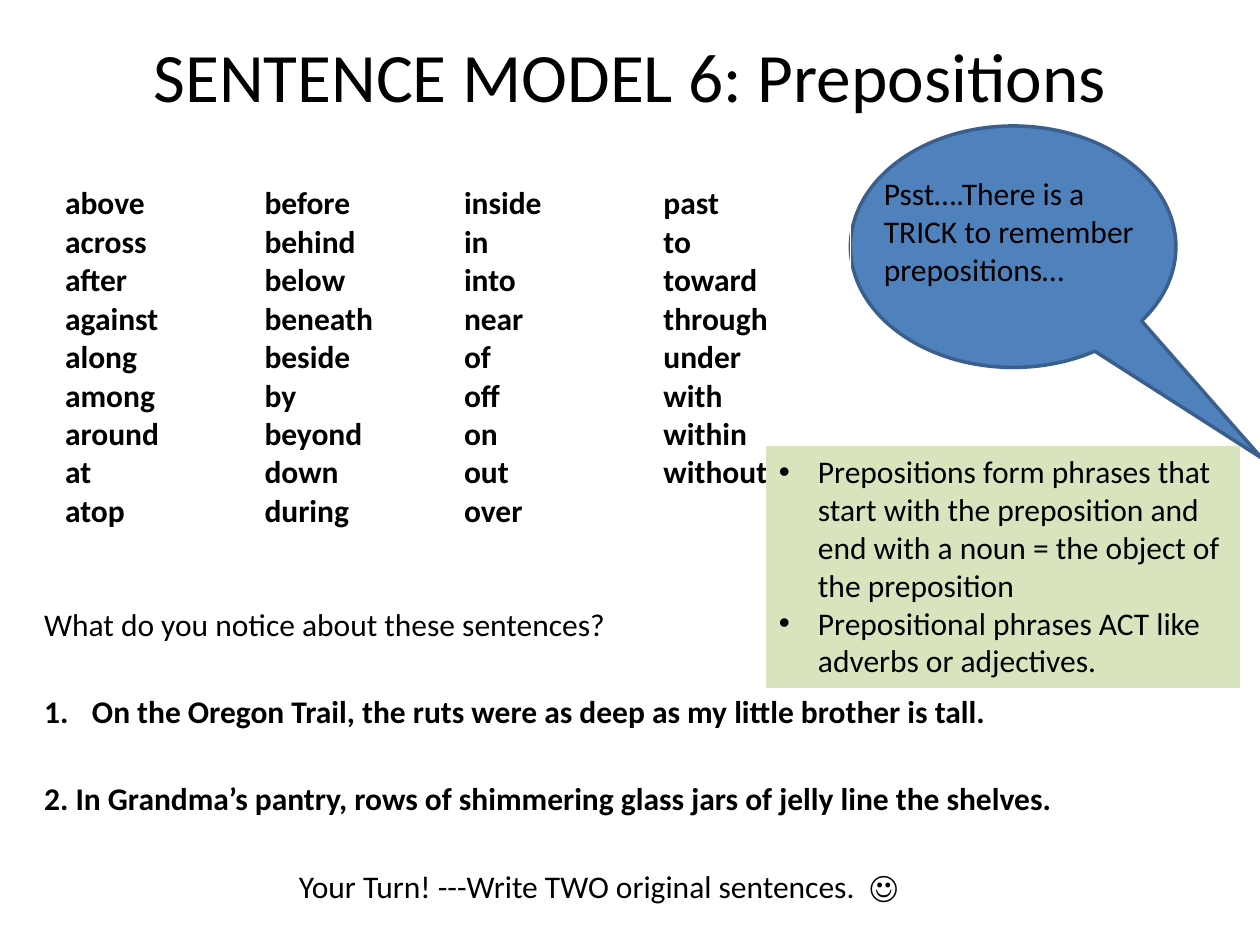
from lxml.etree import SubElement as Sub
from pptx import Presentation
from pptx.dml.color import RGBColor as Rgb
from pptx.enum.shapes import MSO_SHAPE as Kind
from pptx.enum.text import MSO_ANCHOR as Anchor, MSO_AUTO_SIZE as Fit, PP_ALIGN as Align
from pptx.oxml.ns import qn
from pptx.util import Inches, Pt

HUES = {"ink": "000000", "blue": "4F81BD", "edge": "3A5F8C", "green": "D7E4BD"}
UNIT = Inches(10) // 120  # the slide is a grid of 120 columns and 90 rows


def box(*cells):
    return [int(n * UNIT) for n in cells]


def write(par, text, size=18, bold=False, align=Align.LEFT, gap=None, hang=0, mark=None):
    """Fill a paragraph; mark is a bullet tag with its attributes."""
    run = par.add_run()
    run.text = text
    run.font.name, run.font.size, run.font.bold = "Calibri", Pt(size), bold
    run.font.color.rgb = Rgb.from_string(HUES["ink"])
    par.alignment = align
    if gap is not None:
        par.space_before = Pt(gap)
    props = par._p.get_or_add_pPr()
    props.set("marL", str(Inches(hang)))
    props.set("indent", str(-Inches(hang)))
    tag, attrs = mark or ("buNone", {})
    if tag == "buChar":
        Sub(props, qn("a:buFont"), typeface="Arial")
    Sub(props, qn("a:" + tag), **attrs)


deck = Presentation()
deck.slide_width, deck.slide_height = 120 * UNIT, 90 * UNIT
slide = deck.slides.add_slide(deck.slide_layouts[1])
shapes = slide.shapes

# Title, held in the upper part of its box
title = shapes.title
title.left, title.top, title.width, title.height = box(6, 3.6, 108, 15)
frame = title.text_frame
frame.auto_size, frame.vertical_anchor = Fit.NONE, Anchor.MIDDLE
frame.margin_top, frame.margin_bottom = 0, Inches(0.67)
write(frame.paragraphs[0], "SENTENCE MODEL 6: Prepositions", size=39.6, align=Align.CENTER)

# Sentences to study
body = slide.placeholders[1]
body.left, body.top, body.width, body.height = box(3, 57, 108, 16)
frame = body.text_frame
frame.auto_size = Fit.NONE
lines = [
    ("What do you notice about these sentences?", {}),
    ("On the Oregon Trail, the ruts were as deep as my little brother is tall.",
     {"bold": True, "gap": 28.3, "mark": ("buAutoNum", {"type": "arabicPeriod"})}),
    ("2. In Grandma’s pantry, rows of shimmering glass jars of jelly line the shelves.",
     {"bold": True, "gap": 28.3}),
    ("Your Turn! ---Write TWO original sentences.  ☺",
     {"gap": 28.3, "align": Align.CENTER}),
]
for i, (text, form) in enumerate(lines):
    par = frame.add_paragraph() if i else frame.paragraphs[0]
    write(par, text, hang=0.38, **form)

# Speech bubble with its hint
bubble = shapes.add_shape(Kind.OVAL_CALLOUT, *box(81, 12, 31, 23))
bubble.adjustments[0], bubble.adjustments[1] = 0.763, 0.875
bubble.shadow.inherit = False
bubble.fill.solid()
bubble.fill.fore_color.rgb = Rgb.from_string(HUES["blue"])
bubble.line.color.rgb = Rgb.from_string(HUES["edge"])
bubble.line.width = Pt(2)

hint = shapes.add_textbox(*box(83, 16, 27, 12)).text_frame
hint.word_wrap = True
write(hint.paragraphs[0], "Psst….There is a TRICK to remember prepositions…")

# Preposition table, one column of words per cell
words = [
    "above across after against along among around at atop",
    "before behind below beneath beside by beyond down during",
    "inside in into near of off on out over",
    "past to toward through under with within without",
]
table = shapes.add_table(1, len(words), *box(5, 17, 76, 35)).table
for cell, group in zip(table.rows[0].cells, words):
    cell.fill.background()
    for i, word in enumerate(group.split()):
        par = cell.text_frame.add_paragraph() if i else cell.text_frame.paragraphs[0]
        write(par, word, bold=True)

# Rules panel
panel = shapes.add_shape(Kind.RECTANGLE, *box(73, 42.5, 45, 23))
panel.shadow.inherit = False
panel.fill.solid()
panel.fill.fore_color.rgb = panel.line.color.rgb = Rgb.from_string(HUES["green"])
panel.line.width = Pt(0.75)
frame = panel.text_frame
frame.word_wrap, frame.vertical_anchor = True, Anchor.TOP
rules = [
    "Prepositions form phrases that start with the preposition and end with a noun"
    " = the object of the preposition",
    "Prepositional phrases ACT like adverbs or adjectives.",
]
for i, rule in enumerate(rules):
    par = frame.add_paragraph() if i else frame.paragraphs[0]
    write(par, rule, hang=0.31, mark=("buChar", {"char": "•"}))

deck.save("out.pptx")
